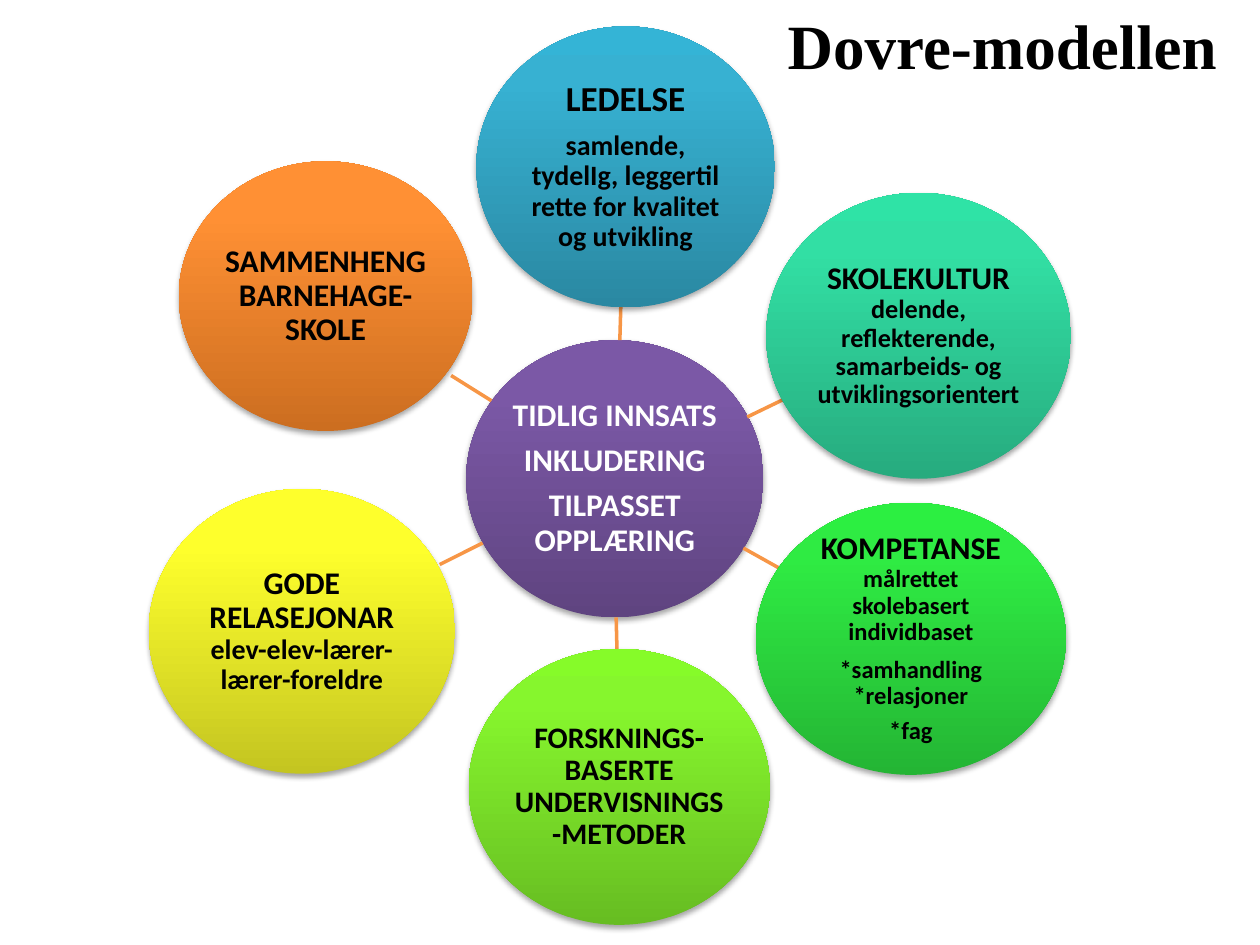
from copy import deepcopy

from lxml import etree
from pptx import Presentation
from pptx.dml.color import RGBColor
from pptx.enum.shapes import MSO_CONNECTOR, MSO_SHAPE
from pptx.enum.text import MSO_ANCHOR, PP_ALIGN
from pptx.oxml.ns import qn
from pptx.util import Pt

ELLIPSE = MSO_SHAPE.OVAL
STRAIGHT = MSO_CONNECTOR.STRAIGHT
CENTER = PP_ALIGN.CENTER
MIDDLE = MSO_ANCHOR.MIDDLE

COLORS = {
    "black": "000000", "white": "FFFFFF", "spoke": "F79646",
    "purple": ("5F4480", "7B58A6", "7C57A8"),
    "blue": ("2A88A2", "37B1D2", "34B4D6"),
    "teal": ("27AB7E", "32DFA4", "2FE3A6"),
    "green": ("24B534", "2FEB43", "2CEF41"),
    "lime": ("67BD22", "86F62D", "86FB29"),
    "yellow": ("C4C521", "FEFF2C", "FEFF2D"),
    "orange": ("CC6E20", "FF9034", "FF9136"),
}
STOPS = (0, 0.8, 1)

CORE = ("purple", (266.4, 194.4, 169.9, 158.4), [
    [("TIDLIG INNSATS", 18)], [("INKLUDERING", 18)], [("TILPASSET OPPLÆRING", 18)]])

# colour, circle, spoke, paragraphs of (text, size)
THEMES = [
    ("blue", (272.2, 15.1, 170.6, 160.6), (354.2, 194.4, 355, 167), [
        [("LEDELSE", 20)],
        [("samlende, tydelIg, leggertil rette for kvalitet og utvikling", 16)]]),
    ("teal", (437.8, 110.2, 174.2, 163.4), (427, 238.3, 452.2, 226.1), [
        [("SKOLEKULTUR", 18), (" ", 13),
         ("delende, reflekterende, samarbeids- og utviklingsorientert", 15)]]),
    ("green", (432, 287.3, 177.1, 155.5), (424.8, 313.2, 449.3, 326.9), [
        [("KOMPETANSE ", 18), ("målrettet skolebasert individbaset", 14)],
        [("*samhandling *relasjoner", 14)],
        [("*fag", 14)]]),
    ("lime", (267.8, 370.8, 172.1, 157.7), (352.1, 352.8, 352.8, 380.9), [
        [("FORSKNINGS-BASERTE UNDERVISNINGS-METODER", 17)]]),
    ("yellow", (85, 279.4, 175, 162.7), (275.8, 310.3, 251.3, 322.6), [
        [("GODE RELASEJONAR ", 18), ("elev-elev-lærer-lærer-foreldre", 16)]]),
    ("orange", (102.2, 92.2, 167.8, 154.1), (280.8, 229, 257.8, 214.6), [
        [("SAMMENHENG BARNEHAGE-SKOLE", 18)]]),
]


def format_font(font, name, size, color):
    """Apply a bold face, size and colour."""
    font.name, font.size, font.bold = name, Pt(size), True
    font.color.rgb = RGBColor.from_string(COLORS[color])


def fill_gradient(shape, hexes):
    """Fill a shape from dark at the bottom to light at the top."""
    shape.fill.gradient()
    shape.fill.gradient_angle = 90
    gs_list = shape.fill._fill._gradFill.find(qn("a:gsLst"))
    gs_list.append(deepcopy(gs_list[-1]))
    for stop, position, color in zip(shape.fill.gradient_stops, STOPS, hexes):
        stop.position = position
        stop.color.rgb = RGBColor.from_string(color)


def add_shadow(shape):
    """Give a shape a soft shadow straight below it."""
    shape.shadow.inherit = False
    effects = shape._element.spPr.find(qn("a:effectLst"))
    shadow = etree.SubElement(effects, qn("a:outerShdw"), blurRad=str(Pt(3.1)),
                              dist=str(Pt(1.8)), dir="5400000", rotWithShape="0")
    color = etree.SubElement(shadow, qn("a:srgbClr"), val=COLORS["black"])
    etree.SubElement(color, qn("a:alpha"), val="35000")


def add_circle(s, color, box, paragraphs, text_color="black"):
    """Add a gradient ellipse with centred text."""
    sp = s.shapes.add_shape(ELLIPSE, *map(Pt, box))
    fill_gradient(sp, COLORS[color])
    sp.line.fill.background()
    add_shadow(sp)
    tf = sp.text_frame
    tf.word_wrap, tf.vertical_anchor = True, MIDDLE
    tf.margin_left = tf.margin_right = tf.margin_top = tf.margin_bottom = Pt(0.72)
    for i, runs in enumerate(paragraphs):
        p = tf.add_paragraph() if i else tf.paragraphs[0]
        p.alignment, p.line_spacing = CENTER, 0.9
        p.space_after = Pt(0.35 * runs[0][1])
        for text, size in runs:
            r = p.add_run()
            r.text = text
            format_font(r.font, "Calibri", size, text_color)


def add_spoke(s, ends):
    """Add a line from the core towards a theme circle."""
    line = s.shapes.add_connector(STRAIGHT, *map(Pt, ends))
    line.line.color.rgb = RGBColor.from_string(COLORS["spoke"])
    line.line.width = Pt(2)
    etree.SubElement(line._element.spPr, qn("a:effectLst"))


def add_title(s, text):
    """Add the heading in the top right corner."""
    tf = s.shapes.add_textbox(Pt(427.7), Pt(0), Pt(290.2), Pt(51.1)).text_frame
    tf.word_wrap, tf.vertical_anchor = True, MIDDLE
    tf.text = text
    p = tf.paragraphs[0]
    p.alignment = CENTER
    format_font(p.runs[0].font, "Times New Roman", 36, "black")


def main():
    """Build the slide and save it."""
    prs = Presentation()
    prs.slide_width, prs.slide_height = Pt(720), Pt(540)
    s = prs.slides.add_slide(prs.slide_layouts[6])
    add_circle(s, *CORE, text_color="white")
    for color, box, spoke, paragraphs in THEMES:
        add_spoke(s, spoke)
        add_circle(s, color, box, paragraphs)
    add_title(s, "Dovre-modellen")
    prs.save("out.pptx")


if __name__ == "__main__":
    main()
